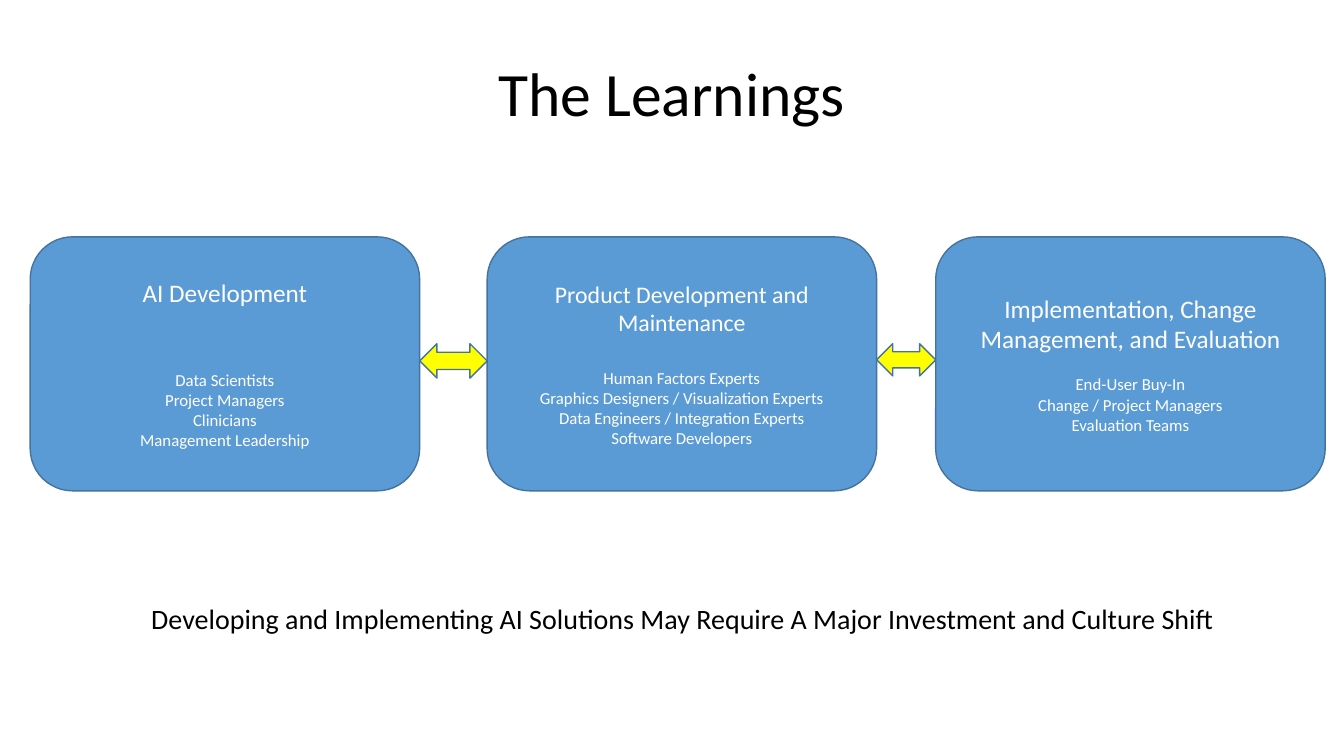
from pptx import Presentation
from pptx.dml.color import RGBColor
from pptx.enum.shapes import MSO_SHAPE as Shape
from pptx.enum.text import MSO_ANCHOR as Anchor, PP_ALIGN as Align
from pptx.util import Pt


def color(code):
    return RGBColor.from_string(code)


class Deck:
    face = "Calibri"
    edge = "43739E"

    def __init__(self):
        self.prs = Presentation()
        self.prs.slide_width, self.prs.slide_height = Pt(960), Pt(540)
        self.slide = self.prs.slides.add_slide(self.prs.slide_layouts[5])

    def style(self, para, size, ink):
        para.alignment = Align.CENTER
        para.font.name = self.face
        para.font.size = Pt(size)
        para.font.color.rgb = color(ink)

    def title(self, text):
        head = self.slide.shapes.title
        head.left, head.top, head.width, head.height = map(Pt, (66, 28.8, 828, 80.6))
        frame = head.text_frame
        frame.text = text
        frame.vertical_anchor = Anchor.MIDDLE
        self.style(frame.paragraphs[0], 44, "000000")
        frame.paragraphs[0].line_spacing = 0.9

    def shape(self, kind, box, fill):
        item = self.slide.shapes.add_shape(kind, *map(Pt, box))
        item.shadow.inherit = False
        item.fill.solid()
        item.fill.fore_color.rgb = color(fill)
        item.line.color.rgb = color(self.edge)
        item.line.width = Pt(1)
        return item

    def card(self, box, head, size, gap, roles):
        """Draw a rounded box with a heading and, after a gap, its roles."""
        frame = self.shape(Shape.ROUNDED_RECTANGLE, box, "5B9BD5").text_frame
        frame.word_wrap = True
        frame.vertical_anchor = Anchor.MIDDLE
        frame.text = "\n".join([head, *roles])
        first, *rest = frame.paragraphs
        self.style(first, size, "FFFFFF")
        first.space_after = Pt(gap)
        for para in rest:
            self.style(para, 12, "FFFFFF")

    def arrow(self, box):
        self.shape(Shape.LEFT_RIGHT_ARROW, box, "FFFF00")

    def note(self, box, text):
        frame = self.slide.shapes.add_textbox(*map(Pt, box)).text_frame
        frame.word_wrap = True
        frame.text = text
        self.style(frame.paragraphs[0], 20, "000000")


LEFTS = (21.6, 348, 668.4)
TOP, WIDE, HIGH = 169.2, 278.2, 181.4
CARDS = (
    ("AI Development", 18, 44,
     ("Data Scientists", "Project Managers", "Clinicians",
      "Management Leadership")),
    ("Product Development and Maintenance", 17, 22,
     ("Human Factors Experts", "Graphics Designers / Visualization Experts",
      "Data Engineers / Integration Experts", "Software Developers")),
    ("Implementation, Change Management, and Evaluation", 18, 14.6,
     ("End-User Buy-In", "Change / Project Managers", "Evaluation Teams")),
)

deck = Deck()
deck.title("The Learnings")
for left, card in zip(LEFTS, CARDS):
    deck.card((left, TOP, WIDE, HIGH), *card)
for left, right, high in zip(LEFTS, LEFTS[1:], (24.6, 23)):
    start = left + WIDE
    deck.arrow((start, 245.5, right - start, high))
deck.note((98, 426.2, 779, 31.7),
          "Developing and Implementing AI Solutions May Require "
          "A Major Investment and Culture Shift")
deck.prs.save("out.pptx")
